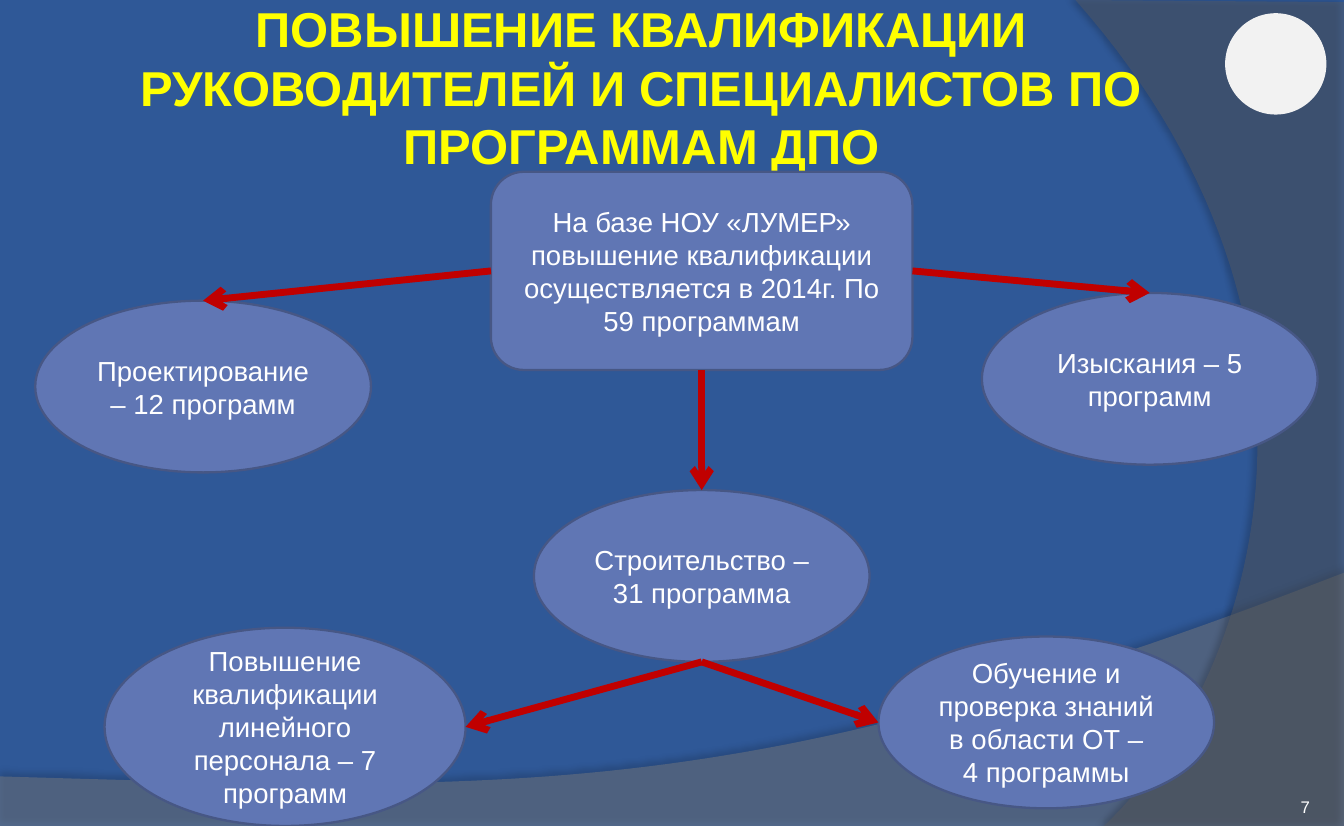
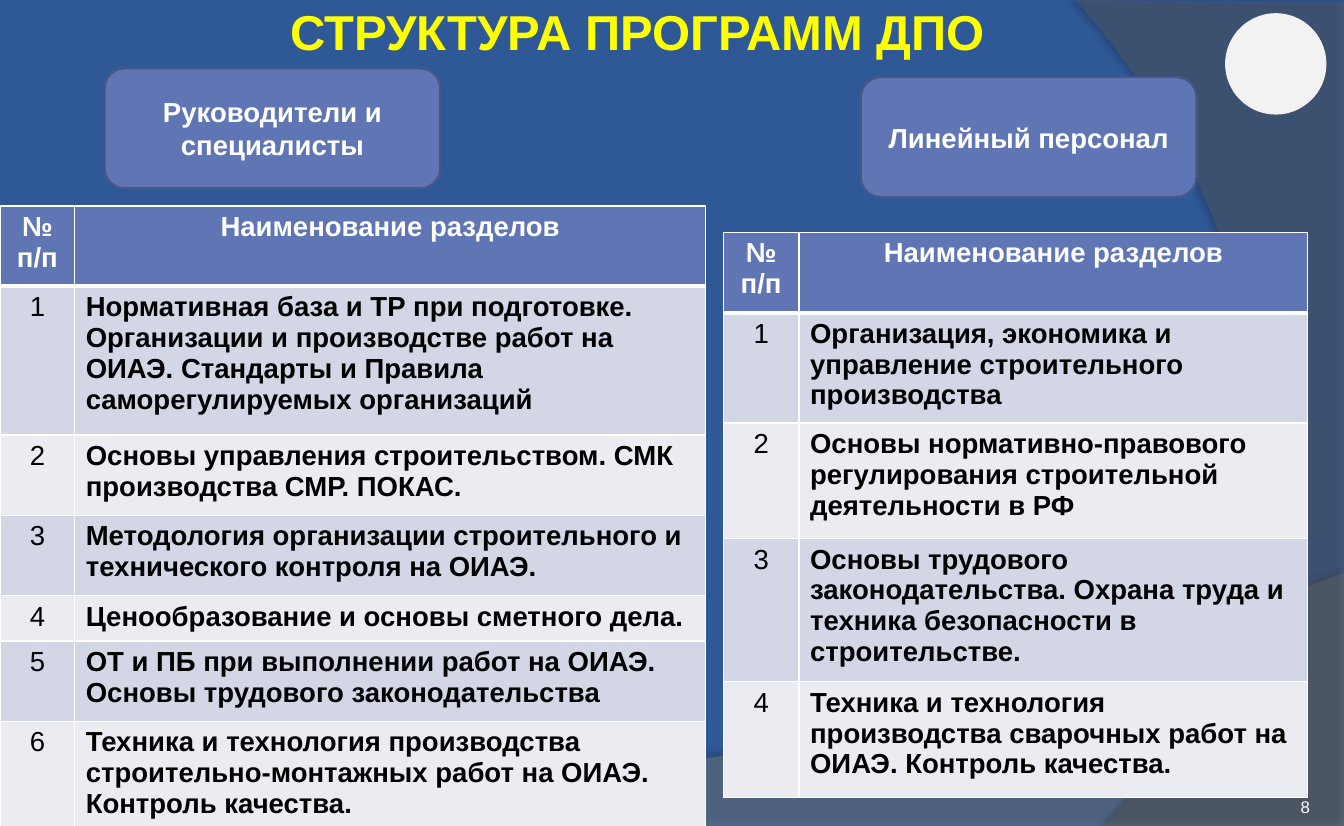
from dataclasses import dataclass

from lxml import etree
from pptx import Presentation
from pptx.dml.color import RGBColor
from pptx.enum.shapes import MSO_CONNECTOR, MSO_SHAPE
from pptx.enum.text import MSO_ANCHOR, MSO_AUTO_SIZE, PP_ALIGN
from pptx.oxml import parse_xml
from pptx.oxml.ns import nsdecls, qn
from pptx.util import Inches, Pt

FONT = "Arial"
WIDTH, HEIGHT = 12.21, 7.5
COLORS = {
    "background": "2F5897", "title": "FFFF00", "white": "FFFFFF", "black": "000000",
    "node": "6076B4", "outline": "475785", "arrow": "C00000", "emblem": "F2F2F2",
    "wave": "7F7F7F", "arc": "5E5E5E", "odd": "D2D6E5", "even": "EAECF2",
}
TOP, LEFT, BOTTOM, RIGHT = range(4)
Point = tuple[float, float]


@dataclass(frozen=True)
class Band:
    color: str
    opacity: int
    before: tuple[Point, ...]
    curve: tuple[Point, Point, Point]
    after: tuple[Point, ...]
    shadow_opacity: int
    shadow_distance: float
    shadow_angle: int


@dataclass(frozen=True)
class Node:
    text: str
    left: float
    top: float
    width: float = 3.05
    height: float = 1.56
    kind: MSO_SHAPE = MSO_SHAPE.OVAL
    bold: bool = False

    def side(self, index: int) -> Point:
        across, down = ((0.5, 0), (0, 0.5), (0.5, 1), (1, 0.5))[index]
        return self.left + across * self.width, self.top + down * self.height


@dataclass(frozen=True)
class Arrow:
    start: str
    start_side: int
    end: str
    end_side: int


@dataclass(frozen=True)
class SectionTable:
    left: float
    top: float
    columns: tuple[float, float]
    rows: tuple[float, ...]
    sections: tuple[str, ...]


BANDS = (
    Band("wave", 45, ((0, 7.05), (0, 7.51), (12.21, 7.51), (12.21, 5.2)),
         ((6.82, 7.29), (4.77, 7.19), (0, 7.05)), (), 35, 3.5, 270),
    Band("arc", 40, ((12.21, 0.02), (12.21, 7.5), (10.03, 7.5)),
         ((11.41, 6.19), (12.42, 3), (9.77, 0)), ((12.21, 0.02),), 45, 4, 180),
)
NODES = {
    "base": Node("На базе НОУ «ЛУМЕР» повышение квалификации осуществляется в 2014г. По 59 программам",
                 4.46, 1.56, 3.83, 1.8, MSO_SHAPE.ROUNDED_RECTANGLE),
    "construction": Node("Строительство – 31 программа", 4.85, 4.45),
    "staff": Node("Повышение квалификации линейного персонала – 7 программ", 0.95, 5.7, 3.28, 1.8),
    "safety": Node("Обучение и проверка знаний в области ОТ – 4 программы", 7.98, 5.78),
    "survey": Node("Изыскания – 5 программ", 8.92, 2.66),
    "design": Node("Проектирование – 12 программ", 0.32, 2.73),
}
ARROWS = (
    Arrow("base", LEFT, "design", TOP),
    Arrow("base", RIGHT, "survey", TOP),
    Arrow("base", BOTTOM, "construction", TOP),
    Arrow("construction", BOTTOM, "safety", LEFT),
    Arrow("construction", BOTTOM, "staff", RIGHT),
)
AUDIENCES = (
    Node("Руководители и специалисты", 0.95, 0.62, 3.05, 1.09, MSO_SHAPE.ROUNDED_RECTANGLE, True),
    Node("Линейный персонал", 7.82, 0.7, 3.05, 1.09, MSO_SHAPE.ROUNDED_RECTANGLE, True),
)
HEADINGS = ("№ п/п", "Наименование разделов")
TABLES = (
    SectionTable(6.57, 2.11, (0.69, 4.62), (0.73, 0.94, 1.05, 1.22, 1.05), (
        "Организация, экономика и управление строительного производства",
        "Основы нормативно-правового регулирования строительной деятельности в РФ",
        "Основы трудового законодательства. Охрана труда и техника безопасности в строительстве.",
        "Техника и технология производства сварочных работ на ОИАЭ. Контроль качества.",
    )),
    SectionTable(0, 1.87, (0.68, 5.73), (0.73, 1.35, 0.73, 0.73, 0.41, 0.73, 0.94), (
        "Нормативная база и ТР при подготовке. Организации и производстве работ на ОИАЭ. "
        "Стандарты и Правила саморегулируемых организаций",
        "Основы управления строительством. СМК производства СМР. ПОКАС.",
        "Методология организации строительного и технического контроля на ОИАЭ.",
        "Ценообразование и основы сметного дела.",
        "ОТ и ПБ при выполнении работ на ОИАЭ. Основы трудового законодательства",
        "Техника и технология производства строительно-монтажных работ на ОИАЭ. Контроль качества.",
    )),
)


def rgb(name: str) -> RGBColor:
    return RGBColor.from_string(COLORS[name])


def paint(shape, name: str) -> None:
    shape.shadow.inherit = False
    shape.fill.solid()
    shape.fill.fore_color.rgb = rgb(name)
    shape.line.fill.background()


def write(frame, text: str, size: float, color: str, align, bold: bool = False) -> None:
    frame.text = text
    para = frame.paragraphs[0]
    para.alignment = align
    font = para.runs[0].font
    font.name, font.size, font.bold = FONT, Pt(size), bold
    font.color.rgb = rgb(color)


def set_margins(frame, inches: float) -> None:
    frame.margin_left = frame.margin_right = Inches(inches)
    frame.margin_top = frame.margin_bottom = Inches(inches)


def curve_points(start: Point, curve: tuple[Point, Point, Point], steps: int = 60) -> list[Point]:
    points = []
    for step in range(1, steps + 1):
        t = step / steps
        weights = ((1 - t) ** 3, 3 * t * (1 - t) ** 2, 3 * t * t * (1 - t), t ** 3)
        x, y = (sum(w * p[axis] for w, p in zip(weights, (start, *curve))) for axis in (0, 1))
        points.append((x, y))
    return points


def draw_band(page, band: Band):
    points = [*band.before, *curve_points(band.before[-1], band.curve), *band.after]
    corners = [(Inches(x), Inches(y)) for x, y in points]
    builder = page.shapes.build_freeform(*corners[0])
    builder.add_line_segments(corners[1:], close=True)
    shape = builder.convert_to_shape()
    paint(shape, band.color)
    properties = shape.element.spPr
    color = properties.find(qn("a:solidFill"))[0]
    etree.SubElement(color, qn("a:alpha")).set("val", str(band.opacity * 1000))
    effects = properties.find(qn("a:effectLst"))
    effects.append(parse_xml(
        f'<a:outerShdw {nsdecls("a")} blurRad="{Pt(4)}" dist="{Pt(band.shadow_distance)}" '
        f'dir="{band.shadow_angle * 60000}" algn="ctr" rotWithShape="0">'
        f'<a:srgbClr val="{COLORS["black"]}"><a:alpha val="{band.shadow_opacity * 1000}"/>'
        f'</a:srgbClr></a:outerShdw>'))
    return shape


def dress_master(deck, page) -> None:
    master = deck.slide_master
    master.background.fill.solid()
    master.background.fill.fore_color.rgb = rgb("background")
    emblem = page.shapes.add_shape(MSO_SHAPE.OVAL, Inches(11.13), Inches(0.12), Inches(0.92), Inches(0.92))
    paint(emblem, "emblem")
    decorations = [*(draw_band(page, band) for band in BANDS), emblem]
    for index, shape in enumerate(decorations):
        shape.element.nvSpPr.cNvPr.set("id", str(100 + index))
        master.shapes.element.insert(2 + index, shape.element)


def set_title(page, text: str, left: float, top: float, width: float, height: float) -> None:
    title = page.shapes.title
    title.left, title.top, title.width, title.height = map(Inches, (left, top, width, height))
    frame = title.text_frame
    write(frame, text, 32, "title", PP_ALIGN.CENTER, True)
    frame.word_wrap, frame.auto_size = True, MSO_AUTO_SIZE.NONE
    frame.vertical_anchor = MSO_ANCHOR.MIDDLE
    set_margins(frame, 0.06)


def add_number(page, number: int) -> None:
    frame = page.shapes.add_textbox(Inches(10.88), Inches(7.02), Inches(1.02), Inches(0.4)).text_frame
    write(frame, str(number), 11, "white", PP_ALIGN.RIGHT)
    frame.word_wrap, frame.vertical_anchor = True, MSO_ANCHOR.BOTTOM
    set_margins(frame, 0)


def add_node(page, node: Node):
    shape = page.shapes.add_shape(node.kind, *map(Inches, (node.left, node.top, node.width, node.height)))
    paint(shape, "node")
    shape.line.color.rgb = rgb("outline")
    shape.line.width = Pt(1.5)
    frame = shape.text_frame
    frame.word_wrap, frame.vertical_anchor = True, MSO_ANCHOR.MIDDLE
    write(frame, node.text, 18, "white", PP_ALIGN.CENTER, node.bold)
    return shape


def add_arrow(page, arrow: Arrow, shapes: dict) -> None:
    start, end = NODES[arrow.start], NODES[arrow.end]
    ends = (*start.side(arrow.start_side), *end.side(arrow.end_side))
    line = page.shapes.add_connector(MSO_CONNECTOR.STRAIGHT, *map(Inches, ends))
    if start.kind == MSO_SHAPE.ROUNDED_RECTANGLE:
        line.begin_connect(shapes[arrow.start], arrow.start_side)
    line.line.color.rgb = rgb("arrow")
    line.line.width = Pt(4.5)
    outline = line.element.spPr.find(qn("a:ln"))
    etree.SubElement(outline, qn("a:tailEnd")).set("type", "arrow")
    etree.SubElement(line.element.spPr, qn("a:effectLst"))


def set_cell(cell, text: str, row: int, column: int) -> None:
    header = row == 0
    widths = {"L": 1, "R": 1, "T": 3 if row == 1 else 1, "B": 3 if header else 1}
    for side, width in widths.items():
        cell._tc.get_or_add_tcPr().append(parse_xml(
            f'<a:ln{side} {nsdecls("a")} w="{Pt(width)}"><a:solidFill>'
            f'<a:srgbClr val="{COLORS["white"]}"/></a:solidFill></a:ln{side}>'))
    cell.fill.solid()
    cell.fill.fore_color.rgb = rgb("node" if header else "odd" if row % 2 else "even")
    align = PP_ALIGN.CENTER if header or column == 0 else PP_ALIGN.LEFT
    write(cell.text_frame, text, 18, "white" if header else "black", align, header or column == 1)


def add_sections(page, section_table: SectionTable) -> None:
    size = (sum(section_table.columns), sum(section_table.rows))
    place = map(Inches, (section_table.left, section_table.top, *size))
    table = page.shapes.add_table(len(section_table.rows), 2, *place).table
    table.horz_banding = False
    for column, width in zip(table.columns, section_table.columns):
        column.width = Inches(width)
    for row, height in zip(table.rows, section_table.rows):
        row.height = Inches(height)
    lines = [HEADINGS, *((str(n), text) for n, text in enumerate(section_table.sections, 1))]
    for row, texts in enumerate(lines):
        for column, text in enumerate(texts):
            set_cell(table.cell(row, column), text, row, column)


def build_training(page) -> None:
    set_title(page, "ПОВЫШЕНИЕ КВАЛИФИКАЦИИ РУКОВОДИТЕЛЕЙ И СПЕЦИАЛИСТОВ ПО ПРОГРАММАМ ДПО",
              0.4, 0.16, 10.86, 1.25)
    add_number(page, 7)
    shapes = {name: add_node(page, node) for name, node in NODES.items()}
    for arrow in ARROWS:
        add_arrow(page, arrow, shapes)


def build_structure(page) -> None:
    set_title(page, "СТРУКТУРА ПРОГРАММ ДПО", 0.81, -0.23, 9.97, 1.02)
    add_number(page, 8)
    for node in AUDIENCES:
        add_node(page, node)
    for section_table in TABLES:
        add_sections(page, section_table)


def main() -> None:
    deck = Presentation()
    deck.slide_width, deck.slide_height = Inches(WIDTH), Inches(HEIGHT)
    layout = deck.slide_layouts[5]
    pages = [deck.slides.add_slide(layout) for _ in range(2)]
    dress_master(deck, pages[0])
    build_training(pages[0])
    build_structure(pages[1])
    deck.save("out.pptx")


if __name__ == "__main__":
    main()
